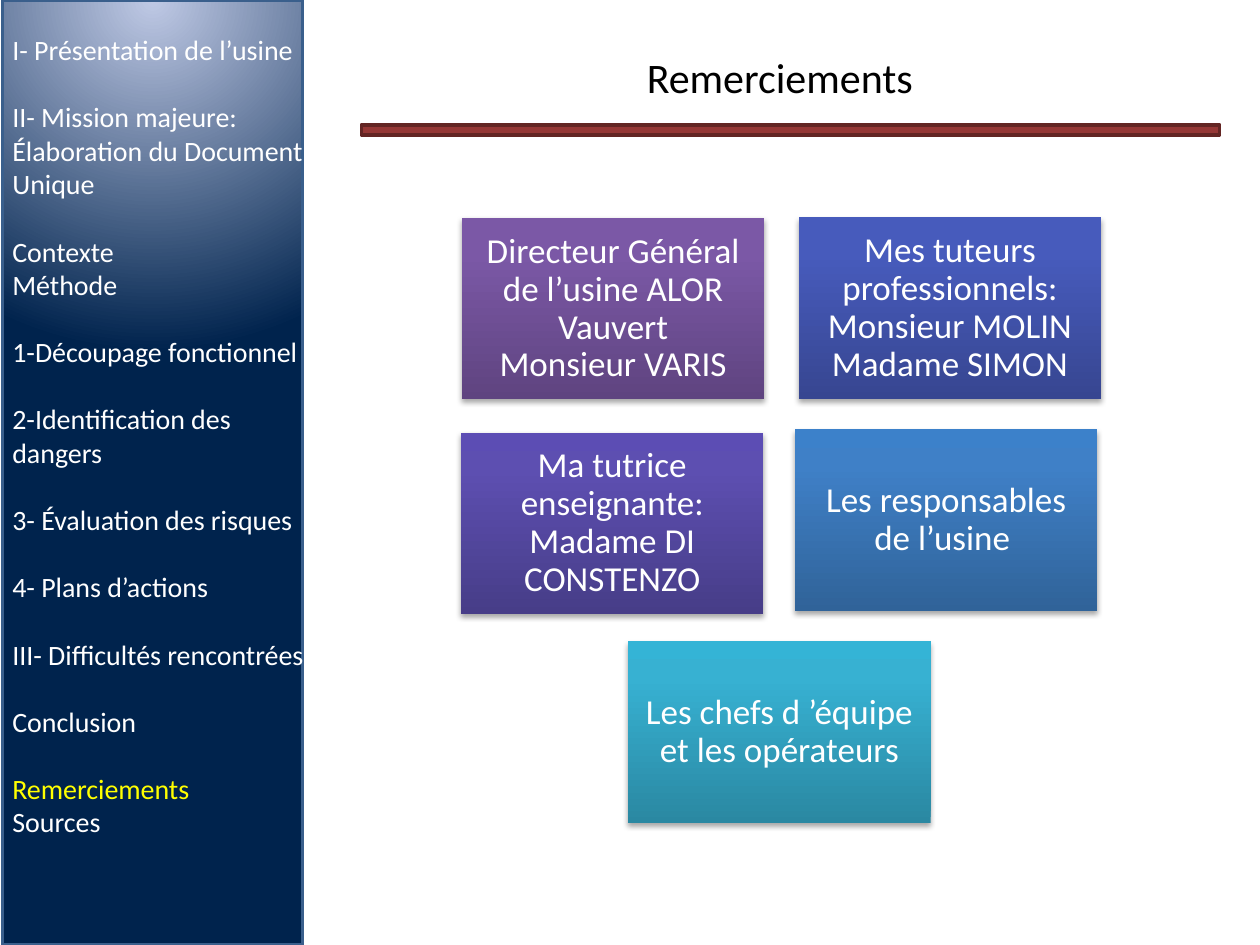
from pptx import Presentation
from pptx.dml.color import RGBColor
from pptx.enum.shapes import MSO_SHAPE
from pptx.enum.text import MSO_ANCHOR, PP_ALIGN
from pptx.oxml import parse_xml
from pptx.oxml.ns import nsdecls
from pptx.util import Pt

NS = nsdecls("a")
DOWN = '<a:lin ang="16200000" scaled="0"/>'
GLOW = ('<a:path path="circle">'
        '<a:fillToRect l="50000" t="0" r="50000" b="100000"/></a:path>')
SHADE = (f'<a:outerShdw {NS} blurRad="{Pt(3.1)}" dist="{Pt(1.8)}" dir="5400000" '
         'rotWithShape="0"><a:srgbClr val="000000"><a:alpha val="35000"/>'
         '</a:srgbClr></a:outerShdw>')


def color(text):
    return RGBColor.from_string(text)


def apply(item, form):
    for name, value in form.items():
        setattr(item, name, value)


class Deck:
    font = "Calibri"
    card_frame = dict(word_wrap=True, vertical_anchor=MSO_ANCHOR.MIDDLE,
                      margin_left=Pt(6), margin_right=Pt(6),
                      margin_top=Pt(6), margin_bottom=Pt(6))
    card_para = dict(alignment=PP_ALIGN.CENTER, line_spacing=0.9)

    def __init__(self, slide):
        self.slide = slide

    def label(self, para, text, size, ink, **form):
        para.text = text
        apply(para, form)
        for run in para.runs:
            apply(run.font, dict(name=self.font, size=Pt(size)))
            run.font.color.rgb = color(ink)

    def title(self, text, *box):
        head = self.slide.shapes.title
        apply(head, dict(zip(("left", "top", "width", "height"), map(Pt, box))))
        apply(head.text_frame, dict(vertical_anchor=MSO_ANCHOR.MIDDLE))
        self.label(head.text_frame.paragraphs[0], text, 24, "000000",
                   alignment=PP_ALIGN.CENTER)

    def rect(self, box, fill, line=None):
        shape = self.slide.shapes.add_shape(MSO_SHAPE.RECTANGLE, *map(Pt, box))
        shape.shadow.inherit = False
        if isinstance(fill, str):
            shape.fill.solid()
            shape.fill.fore_color.rgb = color(fill)
        else:
            self.blend(shape, *fill)
        if line:
            shape.line.color.rgb = color(line)
            shape.line.width = Pt(2)
        else:
            shape.line.fill.background()
        return shape

    def blend(self, shape, stops, way):
        marks = "".join(f'<a:gs pos="{pos * 1000}"><a:srgbClr val="{tone}"/></a:gs>'
                        for pos, tone in stops)
        # The fill comes right after the position and the geometry
        shape.element.spPr.insert(2, parse_xml(
            f'<a:gradFill {NS} rotWithShape="1"><a:gsLst>{marks}</a:gsLst>'
            f'{way}</a:gradFill>'))

    def card(self, text, left, top, tones):
        shape = self.rect((left, top, 172.8, 103.7),
                          (zip((0, 80, 100), tones), DOWN))
        shape.element.spPr.find("{*}effectLst").append(parse_xml(SHADE))
        apply(shape.text_frame, self.card_frame)
        self.label(shape.text_frame.paragraphs[0], text, 20, "FFFFFF",
                   **self.card_para)

    def menu(self, groups, active, *box):
        frame = self.slide.shapes.add_textbox(*map(Pt, box)).text_frame
        frame.word_wrap = True
        para = frame.paragraphs[0]
        for num, group in enumerate(groups):
            for row, text in enumerate(group):
                if num or row:
                    para = frame.add_paragraph()
                gap = 19.2 if num and not row else 0
                ink = "FFFF00" if text == active else "FFFFFF"
                self.label(para, text, 16, ink, space_before=Pt(gap))


def main():
    show = Presentation()
    apply(show, dict(slide_width=Pt(720), slide_height=Pt(540)))
    deck = Deck(show.slides.add_slide(show.slide_layouts[5]))

    # Side panel and title rule
    deck.rect((1.5, 0, 171.5, 540),
              (((0, "BFC9E5"), (71, "00234D")), GLOW), "3A5F8C")
    deck.rect((206.6, 71.3, 490.3, 5.8), "953735", "632523")
    deck.title("Remerciements", 121.7, 20.9, 648, 45.4)

    # Thanks
    cards = [
        ("Directeur Général de l’usine ALOR Vauvert\nMonsieur VARIS",
         264, 124.6, ("5F4480", "7B58A6", "7C57A8")),
        ("Ma tutrice enseignante: Madame DI CONSTENZO",
         263.5, 247.2, ("473D88", "5D4FB1", "5C4DB4")),
        ("Mes tuteurs professionnels: Monsieur MOLIN\nMadame SIMON",
         456.5, 124.3, ("374691", "475BBC", "455ABF")),
        ("Les responsables de l’usine ",
         454.3, 245.4, ("306399", "3F80C7", "3C81CA")),
        ("Les chefs d ’équipe et les opérateurs",
         359, 366.5, ("2A88A2", "37B1D2", "34B4D6")),
    ]
    for card in cards:
        deck.card(*card)

    # Outline of the talk
    groups = [
        ["I- Présentation de l’usine"],
        ["II- Mission majeure: Élaboration du Document Unique"],
        ["Contexte", "Méthode"],
        ["1-Découpage fonctionnel"],
        ["2-Identification des dangers"],
        ["3- Évaluation des risques"],
        ["4- Plans d’actions"],
        ["III- Difficultés rencontrées"],
        ["Conclusion"],
        ["Remerciements", "Sources"],
    ]
    deck.menu(groups, "Remerciements", 0, 15.1, 190.1, 491.8)

    show.save("out.pptx")


if __name__ == "__main__":
    main()
